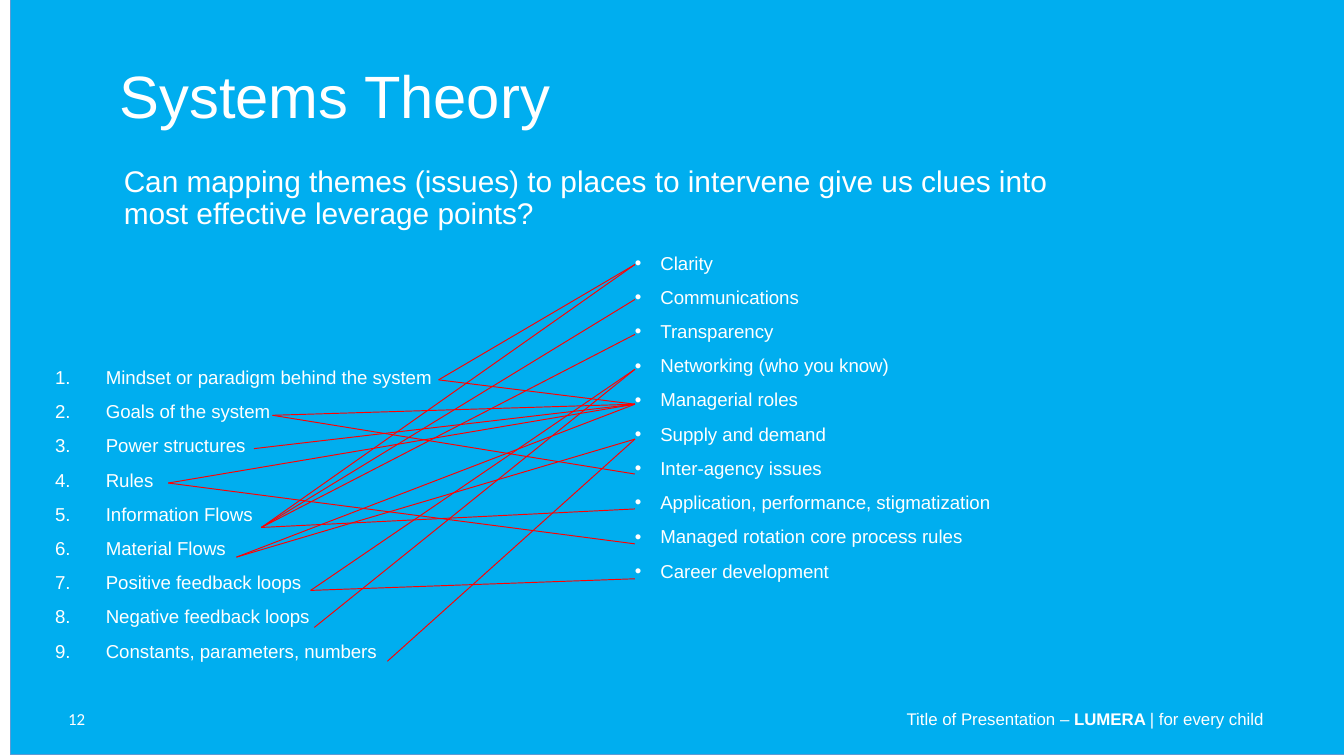
"""Build a slide that links leverage points of a system to workplace themes."""
import dataclasses

import lxml.etree
import pptx
import pptx.dml.color
import pptx.enum.shapes
import pptx.enum.text
import pptx.oxml.ns
import pptx.util

Cm = pptx.util.Cm
Pt = pptx.util.Pt
Anchor = pptx.enum.text.MSO_ANCHOR
Align = pptx.enum.text.PP_ALIGN


@dataclasses.dataclass(frozen=True)
class Theme:
    """Colours, fonts and type sizes of the slide."""
    white: str = "FFFFFF"
    backdrop: str = "00AEEF"
    edge: str = "5B9BD5"
    link: str = "FF0000"
    font: str = "Arial"
    number_font: str = "Calibri"
    title: float = 32
    question: float = 16
    item: float = 10
    footer: float = 9
    hairline: float = 0.5


THEME = Theme()

QUESTION = ("Can mapping themes (issues) to places to intervene give us clues "
            "into most effective leverage points?")

LEVERAGE_POINTS = [
    ("Mindset or paradigm behind the system", (8.29, 7.18), [1, 5]),
    ("Goals of the system", (5.15, 7.85), [5, 7]),
    ("Power structures", (4.8, 8.48), [5]),
    ("Rules", (3.18, 9.13), [5, 9]),
    ("Information Flows", (4.94, 9.97), [1, 2, 3, 8]),
    ("Material Flows", (4.47, 10.53), [5, 6]),
    ("Positive feedback loops", (5.87, 11.16), [4, 10]),
    ("Negative feedback loops", (5.94, 11.86), [4]),
    ("Constants, parameters, numbers", (7.32, 12.5), [6]),
]

ISSUES = [
    "Clarity", "Communications", "Transparency", "Networking (who you know)",
    "Managerial roles", "Supply and demand", "Inter-agency issues",
    "Application, performance, stigmatization",
    "Managed rotation core process rules", "Career development",
]

ISSUE_LEFT, ISSUE_TOP, ISSUE_STEP = 12, 5, 0.66


def colour(code):
    """Return the colour for a hex code."""
    return pptx.dml.color.RGBColor.from_string(code)


def add_xml(parent, tag, **attributes):
    """Append a drawing element with its attributes."""
    return lxml.etree.SubElement(parent, pptx.oxml.ns.qn(tag), attributes)


def place(box, left, top, width, height):
    """Move and size a box, in centimetres."""
    box.left, box.top = Cm(left), Cm(top)
    box.width, box.height = Cm(width), Cm(height)


def set_marker(para, indent, numbered):
    """Give a paragraph a hanging number or bullet."""
    properties = para._p.get_or_add_pPr()
    properties.set("marL", str(Cm(indent)))
    properties.set("indent", str(-Cm(indent)))
    if numbered:
        add_xml(properties, "a:buFont", typeface="+mj-lt")
        add_xml(properties, "a:buAutoNum", type="arabicPeriod")
    else:
        add_xml(properties, "a:buFont", typeface=THEME.font)
        add_xml(properties, "a:buChar", char="•")


def write(box, paragraphs, *, size, font=THEME.font, align=Align.LEFT, anchor=Anchor.TOP,
          inset=True, line_spacing=1.0, before=0, indent=0, numbered=False):
    """Fill a box with paragraphs, each a list of (text, bold) spans."""
    frame = box.text_frame
    frame.word_wrap = True
    frame.auto_size = pptx.enum.text.MSO_AUTO_SIZE.NONE
    frame.vertical_anchor = anchor
    if not inset:
        frame.margin_left = frame.margin_right = 0
        frame.margin_top = frame.margin_bottom = 0
    for index, spans in enumerate(paragraphs):
        para = frame.add_paragraph() if index else frame.paragraphs[0]
        para.alignment = align
        para.line_spacing = line_spacing
        para.space_before = Pt(before)
        if indent:
            set_marker(para, indent, numbered)
        for text, bold in spans:
            span = para.add_run()
            span.text = text
            span.font.name = font
            span.font.size = Pt(size)
            span.font.bold = bold
            span.font.color.rgb = colour(THEME.white)


def add_text(page, area, paragraphs, **text_format):
    """Add a text box in an area and write into it."""
    box = page.shapes.add_textbox(*map(Cm, area))
    write(box, paragraphs, **text_format)


def fill_list(box, area, items, **text_format):
    """Place a body placeholder and write one item a paragraph."""
    place(box, *area)
    write(box, [[(item, False)] for item in items], size=THEME.item,
          inset=False, line_spacing=0.9, before=7.5, **text_format)


def add_backdrop(page):
    """Lay the coloured panel behind everything else."""
    panel = page.shapes.add_shape(pptx.enum.shapes.MSO_SHAPE.RECTANGLE,
                                  Cm(0.2), Cm(-0.02), Cm(25.4), Cm(14.29))
    panel.shadow.inherit = False
    panel.fill.solid()
    panel.fill.fore_color.rgb = colour(THEME.backdrop)
    panel.line.color.rgb = colour(THEME.edge)
    panel.line.width = Pt(THEME.hairline)
    page.shapes.title._element.addprevious(panel._element)


def add_link(page, start, end):
    """Draw a thin line between two points."""
    link = page.shapes.add_connector(pptx.enum.shapes.MSO_CONNECTOR.STRAIGHT,
                                     *map(Cm, (*start, *end)))
    link.line.color.rgb = colour(THEME.link)
    link.line.width = Pt(THEME.hairline)
    add_xml(link._element.spPr, "a:effectLst")


def main():
    """Build and save the slide."""
    deck = pptx.Presentation()
    deck.slide_width, deck.slide_height = Cm(25.4), Cm(14.29)
    page = deck.slides.add_slide(deck.slide_layouts.get_by_name("Two Content"))
    add_backdrop(page)

    title = page.shapes.title
    place(title, 2.26, 1.27, 21.16, 1.78)
    write(title, [[("Systems Theory", False)]], size=THEME.title,
          inset=False, line_spacing=0.9)
    add_text(page, (2.34, 3.15, 18.59, 1.4), [[(QUESTION, False)]],
             size=THEME.question, inset=False, line_spacing=0.9)

    fill_list(page.placeholders[1], (1.04, 6.96, 7.49, 6.35),
              [name for name, _, _ in LEVERAGE_POINTS], indent=0.96, numbered=True)
    fill_list(page.placeholders[2], (ISSUE_LEFT, 4.8, 7.67, 6.81), ISSUES, indent=0.48)

    for _, start, targets in LEVERAGE_POINTS:
        for number in targets:
            add_link(page, start, (ISSUE_LEFT, ISSUE_TOP + ISSUE_STEP * (number - 1)))

    add_text(page, (1.04, 13.21, 5.92, 0.76), [[("12", False)]], size=THEME.footer,
             font=THEME.number_font, anchor=Anchor.MIDDLE)
    add_text(page, (16.08, 13.21, 8.05, 0.76),
             [[("Title of Presentation – ", False), ("LUMERA ", True),
               ("| for every child", False)]],
             size=THEME.footer, align=Align.RIGHT, anchor=Anchor.MIDDLE)
    deck.save("out.pptx")


if __name__ == "__main__":
    main()
